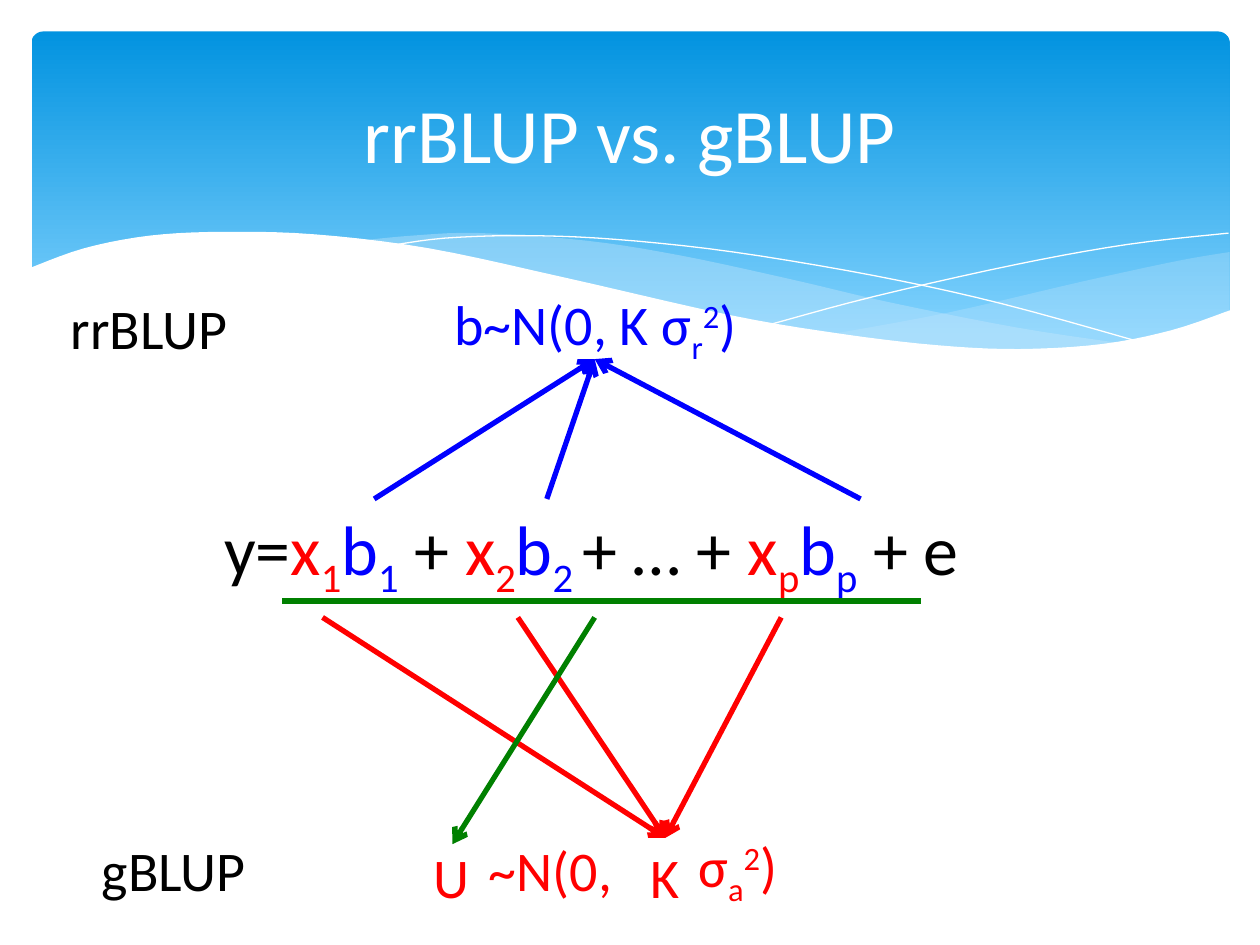
from lxml.etree import SubElement
from pptx import Presentation
from pptx.dml.color import RGBColor
from pptx.enum.shapes import MSO_CONNECTOR as CONN, MSO_SHAPE as SHAPE
from pptx.enum.text import MSO_ANCHOR as ANCHOR, PP_ALIGN as ALIGN
from pptx.oxml.ns import qn
from pptx.util import Inches, Pt

FONT = "Calibri"
COLORS = {
    "black": "000000", "white": "FFFFFF", "red": "FF0000", "blue": "0000FF",
    "green": "008000", "mist": "C6E7FC", "sky_top": "0293E0", "sky_end": "83D3FE",
}
SUB, SUP = -25, 30

TITLE = "rrBLUP vs. gBLUP"
MODEL = [
    ("y=", "black", 0), ("x", "red", 0), ("1", "red", SUB),
    ("b", "blue", 0), ("1", "blue", SUB), (" + ", "black", 0),
    ("x", "red", 0), ("2", "red", SUB), ("b", "blue", 0),
    ("2 ", "blue", SUB), ("+ … + ", "black", 0), ("x", "red", 0),
    ("p", "red", SUB), ("b", "blue", 0), ("p", "blue", SUB), (" + e", "black", 0),
]
MARKER_PRIOR = [("b~N(0, K σ", "blue", 0), ("r", "blue", SUB),
                ("2", "blue", SUP), (")", "blue", 0)]
VARIANCE = [("σ", "red", 0), ("a", "red", SUB), ("2", "red", SUP), (")", "red", 0)]

LABELS = [
    ((3.53, 6.65, 1.68, 0.5), [("~N(0,", "red", 0)]),
    ((3.15, 2.35, 3.15, 0.5), MARKER_PRIOR),
    ((3.2, 6.7, 0.77, 0.5), [("U", "red", 0)]),
    ((4.92, 6.7, 0.71, 0.5), [("K", "red", 0)]),
    ((5.28, 6.65, 1.15, 0.5), VARIANCE),
    ((0.25, 2.35, 1.87, 0.5), [("rrBLUP", "black", 0)]),
    ((0.5, 6.65, 1.76, 0.5), [("gBLUP", "black", 0)]),
]
ARROWS = [
    ("red", (5.28, 6.65), [(6.2, 4.9), (4.11, 4.9), (2.56, 4.9)]),
    ("blue", (4.72, 2.85), [(2.97, 3.96), (4.34, 3.96), (6.83, 3.96)]),
    ("green", (3.59, 6.7), [(4.72, 4.9)]),
]
UNDERLINE = ((2.24, 4.77), (7.31, 4.77))

RIGHT_WAVE = [
    [(9.76, 2), (9.35, 2.07), (8.61, 2.23), (7.53, 2.48), (6.61, 2.65)],
    [(6.61, 2.65), (7.19, 2.72), (7.81, 2.77), (8.35, 2.77), (8.89, 2.72),
     (9.35, 2.62), (9.76, 2.47)],
]
MIDDLE_WAVE = [
    [(8.93, 2.73), (8.07, 2.6), (7.06, 2.4), (6.29, 2.22), (5.41, 2.03),
     (4.65, 1.91), (3.8, 1.85), (3.28, 1.87), (2.86, 1.91)],
    [(2.86, 1.91), (3.62, 2.03), (4.49, 2.22), (5.66, 2.48), (6.65, 2.66),
     (7.48, 2.76), (8.18, 2.78), (8.93, 2.73)],
]
FALLING_LINE = [[(3.09, 1.95), (3.53, 1.89), (4.16, 1.87), (4.89, 1.9), (5.82, 2),
                 (6.95, 2.19), (7.95, 2.41), (9.07, 2.72)]]
RISING_LINE = [[(6.13, 2.57), (6.95, 2.35), (8.06, 2.1), (8.95, 1.94), (9.75, 1.85)]]
WHITE_WAVE = [
    [(9.77, 2.46), (9.3, 2.62), (8.75, 2.73), (8.09, 2.77), (7.44, 2.74),
     (6.68, 2.65), (5.79, 2.5), (4.47, 2.2), (3.4, 1.97), (2.5, 1.86),
     (1.77, 1.84), (1.19, 1.87), (0.67, 1.97), (0.23, 2.13)],
    [(0.23, 3.29), (9.77, 3.29)],
]
WAVES = [
    (RIGHT_WAVE, "mist", 29), (MIDDLE_WAVE, "mist", 40),
    (FALLING_LINE, None, None), (RISING_LINE, None, None), (WHITE_WAVE, "white", 100),
]


def rgb(name):
    return RGBColor.from_string(COLORS[name])


def smooth(knots, steps=5):
    padded = [knots[0], *knots, knots[-1]]
    points = [knots[0]]
    for a, b, c, d in zip(padded, padded[1:], padded[2:], padded[3:]):
        for i in range(1, steps + 1):
            t = i / steps
            points.append(tuple(
                q + t * (r - p) / 2 + t * t * (2 * p - 5 * q + 4 * r - v) / 2
                + t ** 3 * (3 * q - p - 3 * r + v) / 2
                for p, q, r, v in zip(a, b, c, d)))
    return points


def add_wave(s, curves, color, opacity):
    points = [(Inches(x), Inches(y)) for curve in curves for x, y in smooth(curve)]
    builder = s.shapes.build_freeform(*points[0])
    builder.add_line_segments(points[1:], close=color is not None)
    sp = builder.convert_to_shape()
    sp.shadow.inherit = False
    if color is None:
        sp.fill.background()
        sp.line.color.rgb = rgb("white")
        sp.line.width = 0
        return
    sp.fill.solid()
    sp.fill.fore_color.rgb = rgb(color)
    sp.line.fill.background()
    if opacity < 100:
        clr = sp.element.spPr.find(qn("a:solidFill"))[0]
        SubElement(clr, qn("a:alpha"), val=str(opacity * 1000))


def add_panel(s):
    sp = s.shapes.add_shape(SHAPE.ROUNDED_RECTANGLE, *map(Inches, (0.25, 0.25, 9.51, 2.7)))
    sp.adjustments[0] = 0.034
    sp.shadow.inherit = False
    sp.line.fill.background()
    sp.fill.gradient()
    sp.fill.gradient_angle = 270
    for stop, (position, color) in zip(sp.fill.gradient_stops,
                                       [(0, "sky_top"), (0.9, "sky_end")]):
        stop.position = position
        stop.color.rgb = rgb(color)


def write(sp, runs, size, align=ALIGN.CENTER, anchor=ANCHOR.MIDDLE):
    tf = sp.text_frame
    for key, value in {"word_wrap": True, "vertical_anchor": anchor}.items():
        setattr(tf, key, value)
    p = tf.paragraphs[0]
    p.alignment = align
    for text, color, base in runs:
        r = p.add_run()
        r.text = text
        for key, value in {"name": FONT, "size": Pt(size), "bold": False}.items():
            setattr(r.font, key, value)
        r.font.color.rgb = rgb(color)
        if base:
            r.font._element.set("baseline", str(base * 1000))


def add_line(s, start, end, color, arrow=True):
    c = s.shapes.add_connector(CONN.STRAIGHT, *map(Inches, (*start, *end)))
    c.line.color.rgb = rgb(color)
    c.line.width = Pt(3)
    if arrow:
        SubElement(c.line._get_or_add_ln(), qn("a:tailEnd"), type="arrow")
    SubElement(c.element.spPr, qn("a:effectLst"))


def main():
    prs = Presentation()
    prs.slide_width, prs.slide_height = Inches(10), Inches(7.5)
    s = prs.slides.add_slide(prs.slide_layouts[5])

    add_panel(s)
    for wave in WAVES:
        add_wave(s, *wave)

    title = s.shapes.title
    title.element.getparent().append(title.element)
    title.left, title.top, title.width, title.height = map(Inches, (0.5, 0.37, 9, 1.37))
    write(title, [(TITLE, "white", 0)], 44)

    model = s.shapes.add_textbox(*map(Inches, (1.68, 3.96, 7.4, 0.77)))
    write(model, MODEL, 40, ALIGN.LEFT, ANCHOR.TOP)
    for box, runs in LABELS:
        write(s.shapes.add_textbox(*map(Inches, box)), runs, 32)

    add_line(s, *UNDERLINE, "green", arrow=False)
    for color, target, starts in ARROWS:
        for start in starts:
            add_line(s, start, target, color)

    prs.save("out.pptx")


if __name__ == "__main__":
    main()
